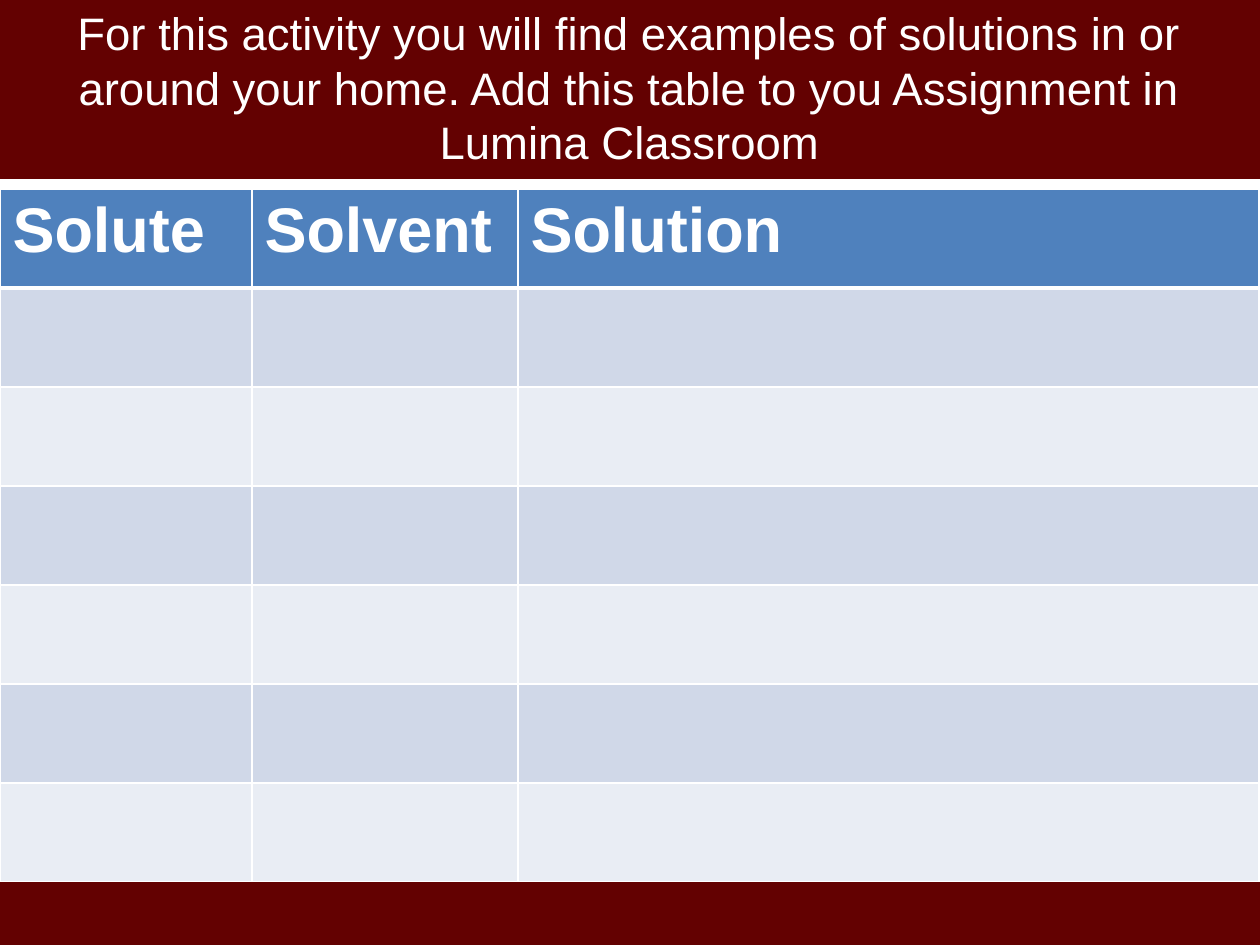
from lxml import etree
from pptx import Presentation
from pptx import util as u
from pptx.dml.color import RGBColor
from pptx.enum import shapes, text
from pptx.oxml.ns import qn

SCALE = u.Inches(1) / 126
FONT = "Arial"
COLORS = {
    "maroon": "630101",
    "header": "4F81BD",
    "odd": "D0D8E8",
    "even": "E9EDF4",
    "white": "FFFFFF",
}
HEADINGS = ["Solute", "Solvent", "Solution"]
COLUMN_WIDTHS = [252, 266, 741]
ROW_COUNT = 7
ROW_HEIGHT = 99


def px(length):
    return u.Emu(round(length * SCALE))


def paint(fill, color):
    fill.solid()
    fill.fore_color.rgb = RGBColor.from_string(COLORS[color])


def add_span(para, words, size, bold=False):
    span = para.add_run()
    span.text = words
    span.font.name = FONT
    span.font.size = u.Pt(size)
    span.font.bold = bold
    span.font.color.rgb = RGBColor.from_string(COLORS["white"])


def add_band(page, top, height):
    band = page.shapes.add_shape(
        shapes.MSO_SHAPE.RECTANGLE, 0, px(top), px(1260), px(height))
    band.shadow.inherit = False
    paint(band.fill, "maroon")
    band.line.fill.background()


def add_title(page, words):
    box = page.shapes.add_textbox(px(28), px(5), px(1203), px(164))
    frame = box.text_frame
    frame.word_wrap = True
    frame.vertical_anchor = text.MSO_ANCHOR.MIDDLE
    para = frame.paragraphs[0]
    para.alignment = text.PP_ALIGN.CENTER
    add_span(para, words, 26)


def add_border(cell, side, points):
    properties = cell._tc.get_or_add_tcPr()
    line = etree.SubElement(properties, qn(f"a:ln{side}"), w=str(u.Pt(points)))
    fill = etree.SubElement(line, qn("a:solidFill"))
    etree.SubElement(fill, qn("a:srgbClr"), val=COLORS["white"])


def style_cell(cell, row):
    for side in "LRTB":
        under_header = (row, side) in [(0, "B"), (1, "T")]
        add_border(cell, side, 3 if under_header else 1)
    if row == 0:
        paint(cell.fill, "header")
    else:
        paint(cell.fill, "odd" if row % 2 else "even")


def add_solution_table(page):
    table = page.shapes.add_table(
        ROW_COUNT, len(HEADINGS), 0, px(189),
        px(sum(COLUMN_WIDTHS)), px(ROW_COUNT * ROW_HEIGHT)).table
    for column, width in zip(table.columns, COLUMN_WIDTHS):
        column.width = px(width)
    for index, row in enumerate(table.rows):
        row.height = px(ROW_HEIGHT)
        for cell in row.cells:
            style_cell(cell, index)
    for cell, heading in zip(table.rows[0].cells, HEADINGS):
        add_span(cell.text_frame.paragraphs[0], heading, 36, bold=True)


def main():
    deck = Presentation()
    deck.slide_width, deck.slide_height = px(1260), px(945)
    page = deck.slides.add_slide(deck.slide_layouts[6])
    paint(page.background.fill, "white")
    add_band(page, 874, 73)
    add_band(page, 0, 179)
    add_title(page, "For this activity you will find examples of solutions in or "
                    "around your home. Add this table to you Assignment in "
                    "Lumina Classroom")
    add_solution_table(page)
    deck.save("out.pptx")


if __name__ == "__main__":
    main()
